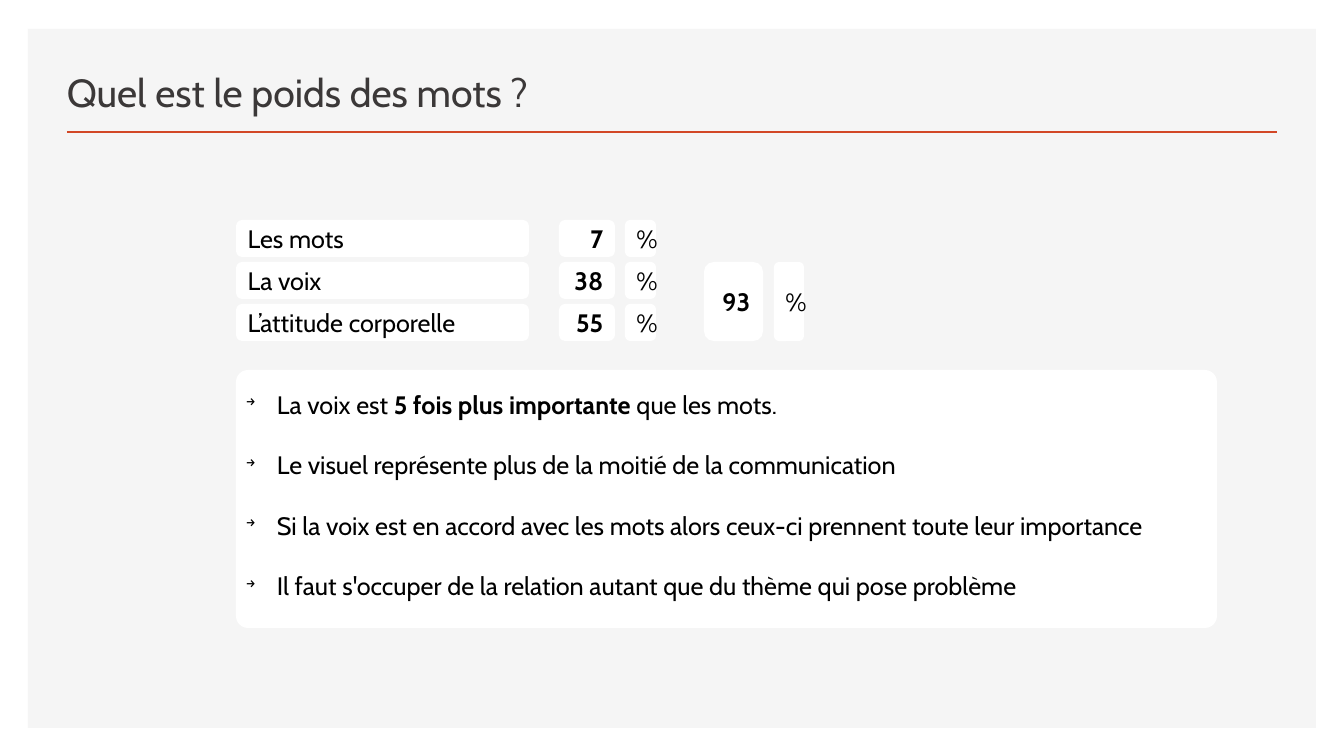
"""Build the slide on the weight of words, voice and body language."""
from lxml.etree import SubElement
from pptx import Presentation
from pptx.dml.color import RGBColor
from pptx.enum.shapes import MSO_CONNECTOR, MSO_SHAPE
from pptx.enum.text import MSO_ANCHOR, PP_ALIGN
from pptx.oxml.ns import qn
from pptx.util import Emu, Pt


def px(*lengths):
    return [Emu(round(length * 914400 / 100.8)) for length in lengths]


def color(value):
    return RGBColor.from_string(value)


deck = Presentation()
deck.slide_width, deck.slide_height = px(1344, 756)
page = deck.slides.add_slide(deck.slide_layouts[6])

LEFT = 236
TOP = 220
ROW_STEP = 42
ROW_HEIGHT = 37
tiles = [
    (MSO_SHAPE.RECTANGLE, 28, 29, 1288, 699, "F5F5F5", "", None, False),
    (MSO_SHAPE.ROUNDED_RECTANGLE, LEFT, 370, 981, 258, "FFFFFF", "", None, False),
]
rows = [("Les mots", "7"), ("La voix", "38"), ("L’attitude corporelle", "55")]
cells = []
for index, (label, value) in enumerate(rows):
    top = TOP + index * ROW_STEP
    cells += [
        (LEFT, top, 293, ROW_HEIGHT, label, PP_ALIGN.JUSTIFY, False),
        (559, top, 56, ROW_HEIGHT, value, PP_ALIGN.RIGHT, True),
        (625, top, 31, ROW_HEIGHT, "%", PP_ALIGN.CENTER, False),
    ]
total_height = ROW_STEP + ROW_HEIGHT
cells += [
    (704, TOP + ROW_STEP, 59, total_height, "93", PP_ALIGN.RIGHT, True),
    (774, TOP + ROW_STEP, 30, total_height, "%", PP_ALIGN.CENTER, False),
]
for left, top, width, height, text, align, bold in cells:
    tiles.append((MSO_SHAPE.ROUNDED_RECTANGLE, left, top, width, height,
                  "FFFFFF", text, align, bold))

for kind, left, top, width, height, fill, text, align, bold in tiles:
    tile = page.shapes.add_shape(kind, *px(left, top, width, height))
    tile.shadow.inherit = False
    tile.fill.solid()
    tile.fill.fore_color.rgb = color(fill)
    tile.line.fill.background()
    if kind == MSO_SHAPE.ROUNDED_RECTANGLE and not text:
        tile.adjustments[0] = 12 / height
    if text:
        tile.text_frame.vertical_anchor = MSO_ANCHOR.MIDDLE
        para = tile.text_frame.paragraphs[0]
        para.text = text
        para.alignment = align
        para.font.name = "Cabin"
        para.font.size = Pt(18)
        para.font.bold = bold
        para.font.color.rgb = color("000000")

rule = page.shapes.add_connector(MSO_CONNECTOR.STRAIGHT, *px(67, 132, 1277, 132))
rule.line.color.rgb = color("D24726")
rule.line.width = Pt(2)
SubElement(rule._element.spPr, qn("a:effectLst"))

title = page.shapes.add_textbox(*px(57, 49, 758, 71))
title.text_frame.word_wrap = True
title.text_frame.vertical_anchor = MSO_ANCHOR.BOTTOM
para = title.text_frame.paragraphs[0]
para.text = "Quel est le poids des mots ?"
para.font.name = "Cabin"
para.font.size = Pt(28)
para.font.color.rgb = color("3B3838")

points = [
    [("La voix est ", False), ("5 fois plus importante", True), (" que les mots.", False)],
    [("Le visuel représente plus de la moitié de la communication", False)],
    [("Si la voix est en accord avec les mots alors ceux-ci prennent toute leur importance", False)],
    [("Il faut s'occuper de la relation autant que du thème qui pose problème", False)],
]
indent = px(31)[0]
box = page.shapes.add_textbox(*px(LEFT, 384, 969, 224))
box.text_frame.word_wrap = True
for index, point in enumerate(points):
    para = box.text_frame.paragraphs[0] if index == 0 else box.text_frame.add_paragraph()
    properties = para._p.get_or_add_pPr()
    properties.set("marL", str(indent))
    properties.set("indent", str(-indent))
    SubElement(properties, qn("a:buSzPct"), val="50000")
    SubElement(properties, qn("a:buChar"), char="→")
    if index:
        para.space_before = Pt(21.6)
    para.font.name = "Cabin"
    para.font.size = Pt(18)
    para.font.color.rgb = color("000000")
    for text, bold in point:
        span = para.add_run()
        span.text = text
        span.font.bold = bold

deck.save("out.pptx")
